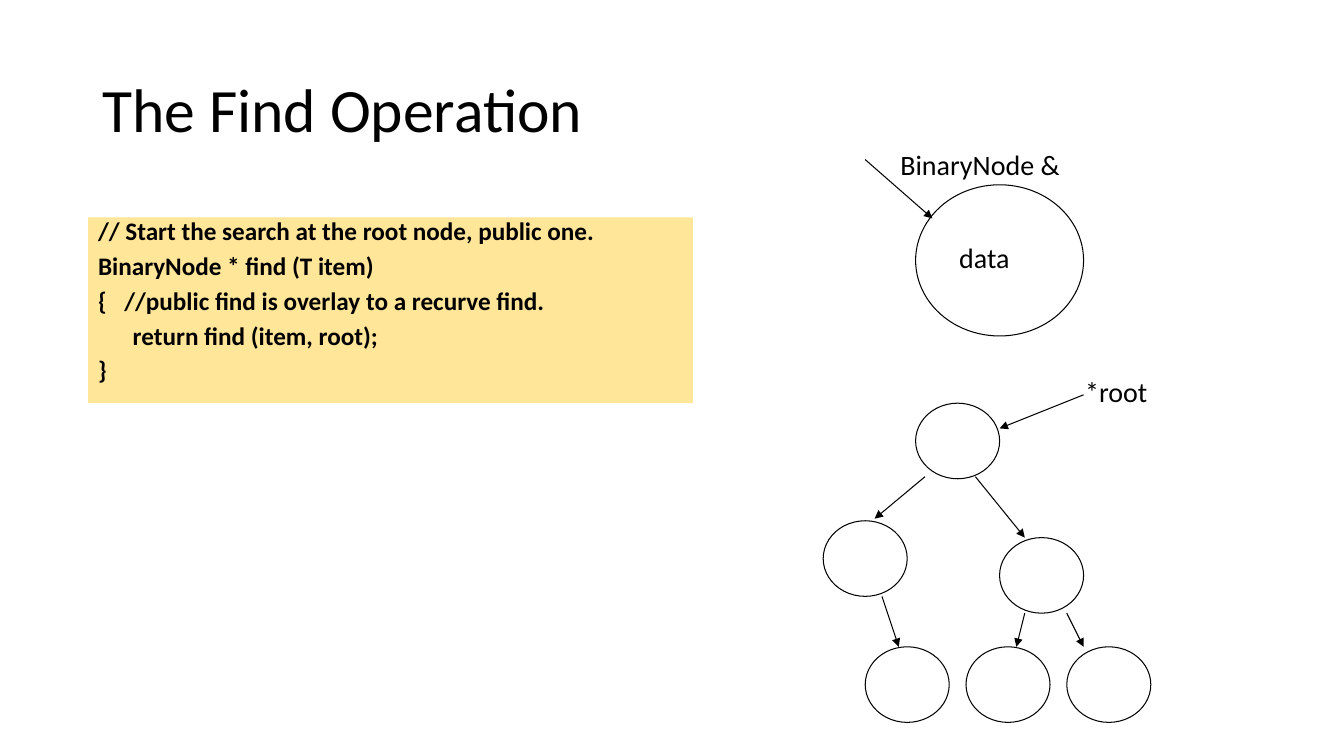
from lxml import etree
from pptx import Presentation
from pptx.dml.color import RGBColor
from pptx.enum.shapes import MSO_CONNECTOR, MSO_SHAPE
from pptx.enum.text import MSO_ANCHOR, PP_ALIGN
from pptx.oxml.ns import qn
from pptx.util import Pt

PX = 9525  # EMU per px, 96 px to the inch
STRAIGHT = MSO_CONNECTOR.STRAIGHT
RECTANGLE, OVAL = MSO_SHAPE.RECTANGLE, MSO_SHAPE.OVAL
TOP, MIDDLE = MSO_ANCHOR.TOP, MSO_ANCHOR.MIDDLE
LEFT = PP_ALIGN.LEFT


def color(hex_string):
    return RGBColor.from_string(hex_string)


class SlideBuilder:
    font = "Calibri"
    ink = "000000"
    code_fill = "FFE699"
    line_width = Pt(0.75)

    def __init__(self, slide):
        self.slide = slide

    def style(self, paragraph, size, bold=False):
        paragraph.alignment = LEFT
        font = paragraph.font
        font.name, font.size, font.bold = self.font, Pt(size), bold
        font.color.rgb = color(self.ink)

    def text(self, words, left, top, width, height, size=20, anchor=TOP, wrap=False):
        box = self.slide.shapes.add_textbox(left * PX, top * PX, width * PX, height * PX)
        frame = box.text_frame
        frame.word_wrap, frame.vertical_anchor = wrap, anchor
        paragraph = frame.paragraphs[0]
        paragraph.text = words
        self.style(paragraph, size)
        return paragraph

    def shape(self, kind, left, top, width, height):
        shape = self.slide.shapes.add_shape(kind, left * PX, top * PX, width * PX, height * PX)
        shape.shadow.inherit = False
        return shape

    def code(self, lines, left, top, width, height):
        """Each line is its words and its indent in px; a tab jumps to 25 px."""
        shape = self.shape(RECTANGLE, left, top, width, height)
        shape.fill.solid()
        shape.fill.fore_color.rgb = color(self.code_fill)
        shape.line.fill.background()
        frame = shape.text_frame
        frame.word_wrap, frame.vertical_anchor = True, TOP
        for number, (words, indent) in enumerate(lines):
            paragraph = frame.add_paragraph() if number else frame.paragraphs[0]
            paragraph.text = words
            self.style(paragraph, 18, bold=True)
            paragraph.line_spacing = 0.75
            paragraph.space_after = Pt(8.7)
            properties = paragraph._p.get_or_add_pPr()
            properties.set("marL", str(indent * PX))
            if "\t" in words:
                tabs = etree.SubElement(properties, qn("a:tabLst"))
                etree.SubElement(tabs, qn("a:tab"), pos=str(25 * PX), algn="l")

    def node(self, left, top, width=80, height=72):
        shape = self.shape(OVAL, left, top, width, height)
        shape.fill.background()
        shape.line.color.rgb = color(self.ink)
        shape.line.width = self.line_width

    def arrow(self, x1, y1, x2, y2):
        connector = self.slide.shapes.add_connector(STRAIGHT, x1 * PX, y1 * PX, x2 * PX, y2 * PX)
        connector.line.color.rgb = color(self.ink)
        connector.line.width = self.line_width
        properties = connector._element.spPr
        etree.SubElement(properties.find(qn("a:ln")), qn("a:tailEnd"), type="triangle")
        etree.SubElement(properties, qn("a:effectLst"))


def main():
    presentation = Presentation()
    presentation.slide_width, presentation.slide_height = 1280 * PX, 720 * PX
    builder = SlideBuilder(presentation.slides.add_slide(presentation.slide_layouts[6]))

    # Title
    title = builder.text("The Find Operation", 88, 38, 1104, 139, size=44, anchor=MIDDLE, wrap=True)
    title.line_spacing = 0.9

    # Code panel
    builder.code([
        ("// Start the search at the root node, public one.", 0),
        ("BinaryNode * find (T item)", 0),
        ("{\t//public find is overlay to a recurve find.", 0),
        ("return find (item, root);", 33),
        ("}", 0),
    ], 84, 207, 576, 177)

    # Single node and its reference
    builder.node(872, 176, 160, 144)
    builder.text("data", 904, 224, 68, 42)
    builder.text("BinaryNode &", 848, 136, 178, 42)
    builder.arrow(824, 152, 888, 208)

    # Tree: root, two children, three leaves
    builder.text("*root", 1024, 352, 80, 42)
    leaves = [(824 + 96 * column, 616) for column in range(3)]
    for left, top in [(872, 384), (784, 496), (952, 512)] + leaves:
        builder.node(left, top)
    for ends in [
        (1032, 376, 952, 408),
        (881, 454, 833, 494),
        (929, 454, 976, 512),
        (840, 568, 856, 616),
        (976, 584, 968, 616),
        (1016, 584, 1032, 616),
    ]:
        builder.arrow(*ends)

    presentation.save("out.pptx")


if __name__ == "__main__":
    main()
